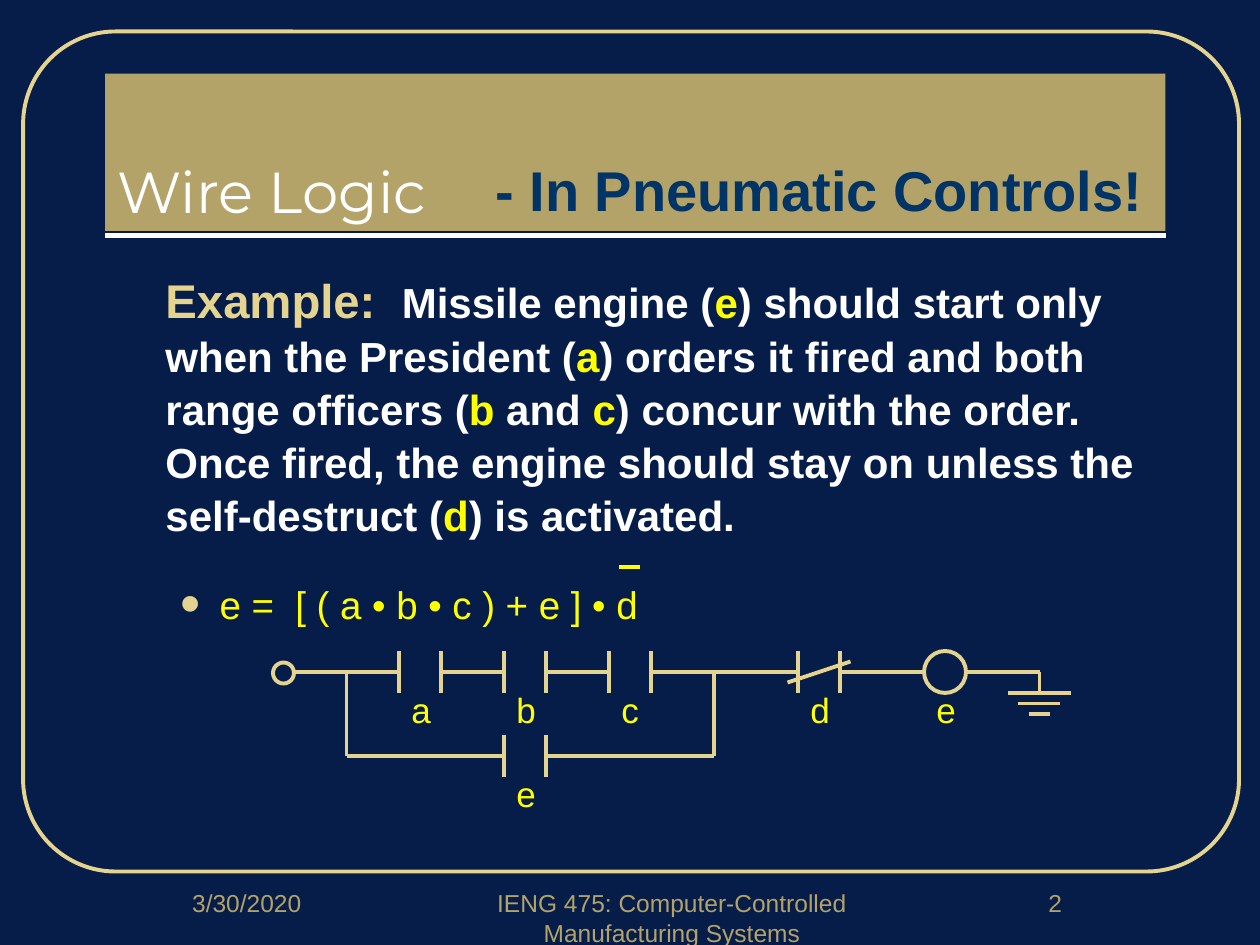
"""Build the wire logic slide: a worked example, its formula and its ladder circuit."""
from lxml.etree import SubElement
from pptx import Presentation
from pptx.dml.color import RGBColor
from pptx.enum.shapes import MSO_CONNECTOR, MSO_SHAPE
from pptx.enum.text import MSO_ANCHOR, MSO_AUTO_SIZE, PP_ALIGN
from pptx.oxml.ns import qn
from pptx.util import Inches, Pt

NAVY, GOLD, SAND, WHITE, YELLOW = "071D49", "B3A369", "E4D490", "FFFFFF", "FFFF00"
color = RGBColor.from_string
UNIT = Inches(1) // 12

deck = Presentation()
deck.slide_width, deck.slide_height = Inches(10), Inches(7.5)
page = deck.slides.add_slide(deck.slide_layouts[1])
page.background.fill.solid()
page.background.fill.fore_color.rgb = color(NAVY)


def add_line(x1, y1, x2, y2, hue=SAND, width=2.25):
    """Draw a line between two points given in grid units."""
    ends = [round(value * UNIT) for value in (x1, y1, x2, y2)]
    line = page.shapes.add_connector(MSO_CONNECTOR.STRAIGHT, *ends)
    line.line.color.rgb = color(hue)
    line.line.width = Pt(width)
    SubElement(line._element.spPr, qn("a:effectLst"))


def add_text(text, left, top, width, height, size, hue, align=PP_ALIGN.CENTER, wrap=True, bold=False):
    """Place a one-paragraph text box, measured in grid units."""
    box = page.shapes.add_textbox(*[round(value * UNIT) for value in (left, top, width, height)])
    box.text_frame.word_wrap = wrap
    para = box.text_frame.paragraphs[0]
    para.text, para.alignment = text, align
    para.font.name, para.font.size, para.font.bold = "Arial", Pt(size), bold
    para.font.color.rgb = color(hue)


title = page.shapes.title
title.left, title.top, title.width, title.height = 10 * UNIT, 7 * UNIT, 101 * UNIT, 15 * UNIT
title.fill.solid()
title.fill.fore_color.rgb = color(GOLD)
title.text_frame.text = "Wire Logic"
title.text_frame.vertical_anchor = MSO_ANCHOR.BOTTOM
title.text_frame.auto_size = MSO_AUTO_SIZE.NONE
para = title.text_frame.paragraphs[0]
para.alignment = PP_ALIGN.LEFT
para.font.name, para.font.size = "Montserrat", Pt(33)
para.font.color.rgb = color(WHITE)
add_line(10, 22.4, 111, 22.4, WHITE, 3)
add_text("- In Pneumatic Controls!", 46, 14.2, 65, 7.7, 32, "003366", PP_ALIGN.LEFT, bold=True)

body = page.placeholders[1]
body.left, body.top, body.width, body.height = 10 * UNIT, 25 * UNIT, 101 * UNIT, 53 * UNIT
frame = body.text_frame
frame.auto_size = MSO_AUTO_SIZE.NONE
example = frame.paragraphs[0]
example.line_spacing, example.space_before = 1.05, Pt(1)
properties = example._p.get_or_add_pPr()
properties.set("marL", str(Inches(0.38)))
properties.set("indent", "0")
SubElement(properties, qn("a:buNone"))
example.font.name, example.font.bold = "Arial", True
for text, size, hue in [
    ("Example:  ", 27, SAND),
    ("Missile engine (", 24, WHITE),
    ("e", 24, YELLOW),
    (") should start only when the President (", 24, WHITE),
    ("a", 24, YELLOW),
    (") orders it fired and both range officers (", 24, WHITE),
    ("b", 24, YELLOW),
    (" and ", 24, WHITE),
    ("c", 24, YELLOW),
    (") concur with the order. Once fired, the engine should stay on unless the self-destruct (", 24, WHITE),
    ("d", 24, YELLOW),
    (") is activated.", 24, WHITE),
]:
    span = example.add_run()
    span.text, span.font.size = text, Pt(size)
    span.font.color.rgb = color(hue)

formula = frame.add_paragraph()
formula.text, formula.level = "e =  [ ( a • b • c ) + e ] • d", 1
formula.line_spacing, formula.space_before = 1.05, Pt(22)
properties = formula._p.get_or_add_pPr()
properties.set("marL", str(Inches(0.81)))
properties.set("indent", str(-Inches(0.31)))
SubElement(SubElement(properties, qn("a:buClr")), qn("a:srgbClr"), val=SAND)
SubElement(properties, qn("a:buSzPct"), val="150000")
SubElement(properties, qn("a:buFont"), typeface="Arial")
SubElement(properties, qn("a:buChar"), char="•")
formula.font.name, formula.font.size = "Arial", Pt(22)
formula.font.color.rgb = color(YELLOW)
add_line(59, 54, 61, 54, YELLOW)

for kind, left, top, width, height in [
    (MSO_SHAPE.ROUNDED_RECTANGLE, 2.2, 3, 115.8, 80),
    (MSO_SHAPE.OVAL, 26, 63.1, 2, 2),
    (MSO_SHAPE.OVAL, 88, 62, 4, 4),
]:
    outline = page.shapes.add_shape(kind, *[round(value * UNIT) for value in (left, top, width, height)])
    outline.fill.background()
    outline.line.color.rgb = color(SAND)
    outline.line.width = Pt(2.25)
    outline.shadow.inherit = False
    if kind == MSO_SHAPE.ROUNDED_RECTANGLE:
        outline.adjustments[0] = 0.11

RAIL, BRANCH = 64, 72
for name, x, y in [("a", 38, RAIL), ("b", 48, RAIL), ("c", 58, RAIL), ("d", 76, RAIL), ("e", 48, BRANCH)]:
    for plate in (x, x + 4):
        add_line(plate, y - 2, plate, y + 2)
    add_text(name, x, y + 1, 4, 5.2, 20, YELLOW, wrap=False)
add_text("e", 88, RAIL + 1, 4, 5.2, 20, YELLOW, wrap=False)
add_line(75, RAIL + 1, 81, RAIL - 1)

for start, end in [(28, 38), (42, 48), (52, 58), (62, 76), (80, 88), (92, 99)]:
    add_line(start, RAIL, end, RAIL)
for corner, contact in [(33, 48), (68, 52)]:
    add_line(corner, RAIL, corner, BRANCH)
    add_line(corner, BRANCH, contact, BRANCH)

add_line(99, RAIL, 99, RAIL + 2)
for step, half in enumerate((3, 2, 1)):
    add_line(99 - half, RAIL + 2 + step, 99 + half, RAIL + 2 + step)

for text, left, width in [
    ("3/30/2020", 10, 27),
    ("IENG 475: Computer-Controlled Manufacturing Systems", 43, 42),
    ("2", 90, 21),
]:
    add_text(text, left, 84, width, 6, 14, GOLD)

deck.save("out.pptx")
